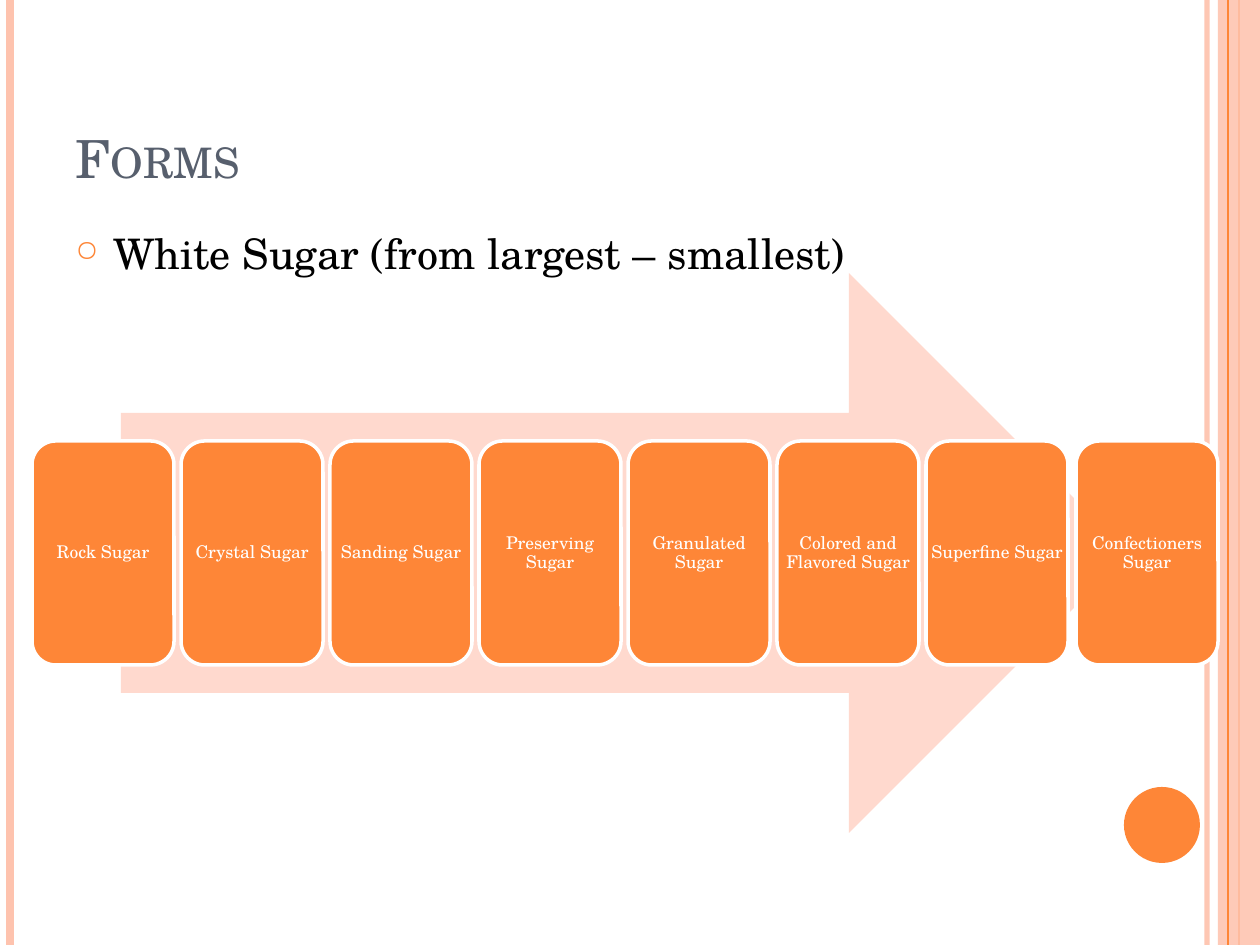
from lxml import etree
from pptx import Presentation, util as u
from pptx.dml.color import RGBColor
from pptx.enum import shapes, text
from pptx.oxml import ns

ORANGE = RGBColor(0xFE, 0x86, 0x37)
PEACH = RGBColor(0xFE, 0xC3, 0xAE)
PALE = RGBColor(0xFF, 0xD9, 0xCE)
SLATE = RGBColor(0x57, 0x5F, 0x6D)
WHITE = RGBColor(0xFF, 0xFF, 0xFF)
BLACK = RGBColor(0, 0, 0)
FONT = "TeX Gyre Schola"
PX = 914400 / 126
WIDTH, HEIGHT = 1260, 945


def px(*lengths):
    return [u.Emu(round(length * PX)) for length in lengths]


def add_filled(kind, place, color):
    shape = page.shapes.add_shape(kind, *px(*place))
    shape.shadow.inherit = False
    shape.fill.solid()
    shape.fill.fore_color.rgb = color
    shape.line.fill.background()
    return shape


deck = Presentation()
deck.slide_width, deck.slide_height = px(WIDTH, HEIGHT)
page = deck.slides.add_slide(deck.slide_layouts[5])

translucent = []
for x, color, weight in [(1207, PEACH, 3), (10, PEACH, 4.5), (1239, ORANGE, 1.5)]:
    rule = page.shapes.add_connector(shapes.MSO_CONNECTOR.STRAIGHT, *px(x, 0, x, HEIGHT))
    rule.line.color.rgb = color
    rule.line.width = u.Pt(weight)
    etree.SubElement(rule._element.spPr, ns.qn("a:effectLst"))
    if x == 1207:
        translucent.append((rule, 93000))

band = add_filled(shapes.MSO_SHAPE.RECTANGLE, (1218, 0, 42, HEIGHT), PEACH)
translucent.append((band, 87000))
for shape, alpha in translucent:
    tint = shape._element.spPr.find(".//" + ns.qn("a:srgbClr"))
    etree.SubElement(tint, ns.qn("a:alpha"), val=str(alpha))

edge = page.shapes.add_connector(shapes.MSO_CONNECTOR.STRAIGHT, *px(1228, 0, 1228, HEIGHT))
edge.line.color.rgb = ORANGE
edge.line.width = u.Pt(0.75)
etree.SubElement(edge._element.spPr, ns.qn("a:effectLst"))
add_filled(shapes.MSO_SHAPE.OVAL, (1124, 787, 76, 76), ORANGE)

title = page.shapes.title
title.left, title.top, title.width, title.height = px(63, 38, 1029, 157)
title.text_frame.text = "Forms"
title.text_frame.vertical_anchor = text.MSO_ANCHOR.BOTTOM
para = title.text_frame.paragraphs[0]
para.alignment = text.PP_ALIGN.LEFT
para.font.name, para.font.size = FONT, u.Pt(30)
para.font.color.rgb = SLATE
para.runs[0]._r.get_or_add_rPr().set("cap", "small")

body = page.shapes.add_textbox(*px(63, 221, 1029, 672))
body.text_frame.word_wrap = True
para = body.text_frame.paragraphs[0]
para.text = "White Sugar (from largest – smallest)"
para.space_before = u.Pt(6)
para.font.name, para.font.size = FONT, u.Pt(24)
para.font.color.rgb = BLACK
props = para._p.get_or_add_pPr()
indent = px(38)[0]
props.set("marL", str(indent))
props.set("indent", str(-indent))
bullet_color = etree.Element(ns.qn("a:buClr"))
etree.SubElement(bullet_color, ns.qn("a:srgbClr"), val=str(ORANGE))
bullet_size = etree.Element(ns.qn("a:buSzPct"), val="70000")
bullet = etree.Element(ns.qn("a:buChar"), char="○")
for part in (bullet_color, bullet_size, bullet):
    props.find(ns.qn("a:defRPr")).addprevious(part)

add_filled(shapes.MSO_SHAPE.RIGHT_ARROW, (121, 273, 1008, 560), PALE)

SUGARS = [
    "Rock Sugar", "Crystal Sugar", "Sanding Sugar", "Preserving Sugar",
    "Granulated Sugar", "Colored and Flavored Sugar", "Superfine Sugar",
    "Confectioners Sugar",
]
FIRST, LAST = 32, 1076
for index, sugar in enumerate(SUGARS):
    place = (FIRST + index * (LAST - FIRST) // (len(SUGARS) - 1), 441, 142, 224)
    card = add_filled(shapes.MSO_SHAPE.ROUNDED_RECTANGLE, place, ORANGE)
    card.line.color.rgb = WHITE
    card.line.width = u.Pt(2)
    label = page.shapes.add_textbox(*px(*place))
    frame = label.text_frame
    frame.word_wrap = True
    frame.vertical_anchor = text.MSO_ANCHOR.MIDDLE
    frame.margin_left, frame.margin_top, frame.margin_right, frame.margin_bottom = px(5, 5, 5, 5)
    para = frame.paragraphs[0]
    para.text = sugar
    para.alignment = text.PP_ALIGN.CENTER
    para.line_spacing = 0.9
    para.font.name, para.font.size = FONT, u.Pt(10)
    para.font.color.rgb = WHITE

deck.save("out.pptx")
